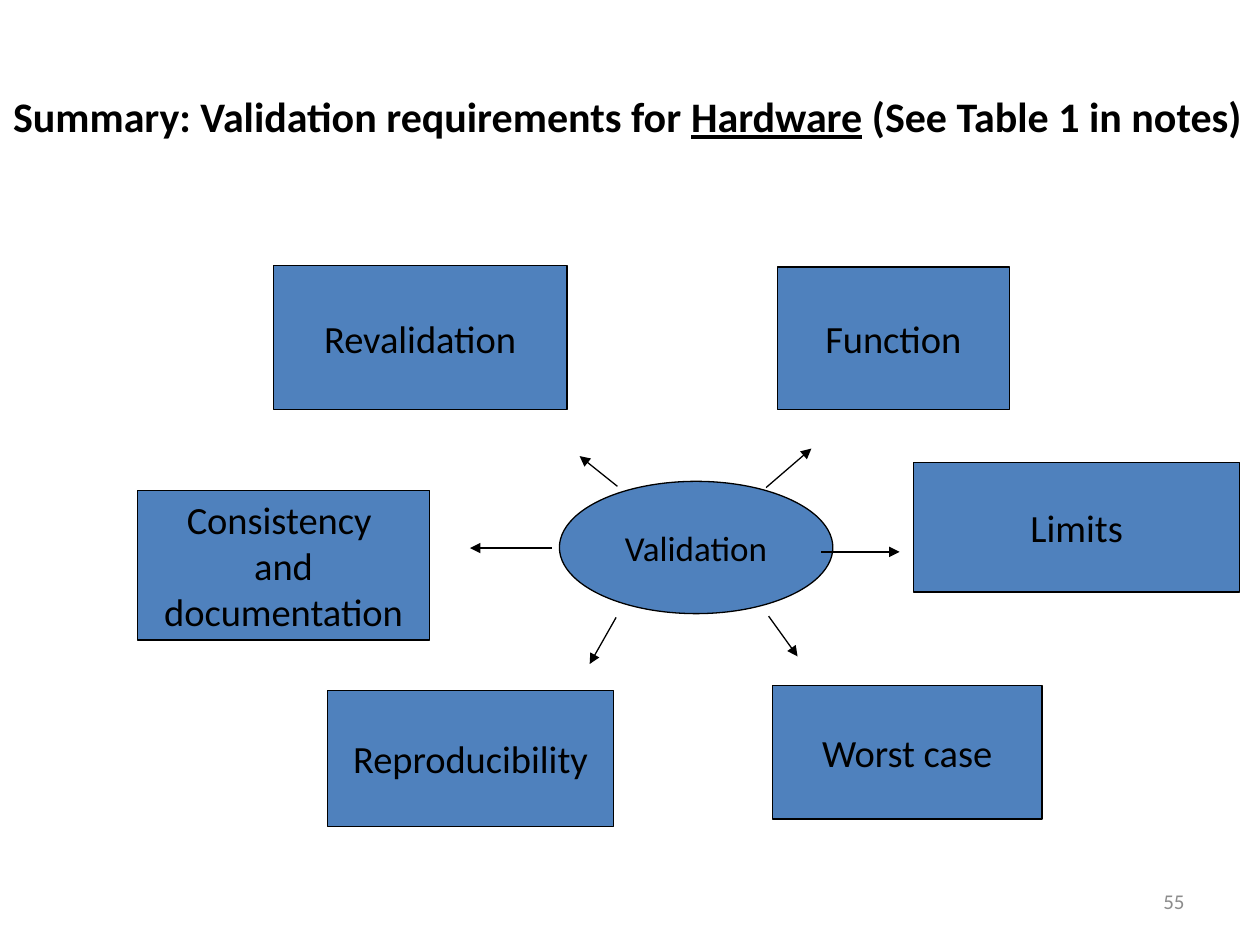
from lxml.etree import SubElement
from pptx import Presentation
from pptx.dml.color import RGBColor
from pptx.enum.shapes import MSO_CONNECTOR, MSO_SHAPE
from pptx.enum.text import MSO_ANCHOR, MSO_AUTO_SIZE, PP_ALIGN
from pptx.oxml.ns import qn
from pptx.util import Inches, Pt

BLACK = RGBColor(0x00, 0x00, 0x00)
BLUE = RGBColor(0x4F, 0x81, 0xBD)
GRAY = RGBColor(0x8C, 0x8C, 0x8C)
FONT = "Calibri"

TITLE = [
    ("Summary: Validation requirements for ", False),
    ("Hardware", True),
    (" (See Table 1 in notes)", False),
]
HUB = ("Validation", (4.44, 3.82, 2.17, 1.05))
REQUIREMENTS = [
    ("Reproducibility", (2.6, 5.48, 2.27, 1.08)),
    ("Consistency \nand\ndocumentation", (1.09, 3.89, 2.32, 1.19)),
    ("Limits", (7.25, 3.67, 2.59, 1.03)),
    ("Worst case", (6.13, 5.44, 2.14, 1.06)),
    ("Revalidation", (2.17, 2.11, 2.33, 1.14)),
    ("Function", (6.17, 2.12, 1.84, 1.13)),
]
ARROWS = [
    (6.52, 4.38, 7.14, 4.38),
    (4.38, 4.35, 3.73, 4.35),
    (4.89, 4.9, 4.68, 5.27),
    (6.1, 4.89, 6.33, 5.21),
    (6.08, 3.87, 6.44, 3.56),
    (4.9, 3.86, 4.6, 3.62),
]
PAGE_NUMBER = "55"


def inches(values):
    return [Inches(value) for value in values]


def write_text(shape, text, size, color=BLACK, bold=False,
               align=PP_ALIGN.CENTER, wrap=True):
    runs = [(text, False)] if isinstance(text, str) else text
    frame = shape.text_frame
    frame.auto_size = MSO_AUTO_SIZE.NONE
    frame.word_wrap = wrap
    frame.vertical_anchor = MSO_ANCHOR.MIDDLE
    paragraph = frame.paragraphs[0]
    for content, underlined in runs:
        for index, line in enumerate(content.split("\n")):
            if index:
                paragraph = frame.add_paragraph()
            paragraph.alignment = align
            run = paragraph.add_run()
            run.text = line
            run.font.name = FONT
            run.font.size = Pt(size)
            run.font.bold = bold
            run.font.underline = underlined
            run.font.color.rgb = color


def add_node(slide, kind, text, box, size):
    shape = slide.shapes.add_shape(kind, *inches(box))
    shape.shadow.inherit = False
    shape.fill.solid()
    shape.fill.fore_color.rgb = BLUE
    shape.line.color.rgb = BLACK
    shape.line.width = Pt(0.75)
    write_text(shape, text, size, wrap=False)


def add_arrow(slide, ends):
    connector = slide.shapes.add_connector(MSO_CONNECTOR.STRAIGHT, *inches(ends))
    connector.line.color.rgb = BLACK
    connector.line.width = Pt(0.75)
    SubElement(connector.line._get_or_add_ln(), qn("a:tailEnd"), type="triangle")
    SubElement(connector._element.spPr, qn("a:effectLst"))


def main():
    presentation = Presentation()
    presentation.slide_width, presentation.slide_height = inches((10, 7.5))
    slide = presentation.slides.add_slide(presentation.slide_layouts[5])

    title = slide.shapes.title
    title.left, title.top, title.width, title.height = inches((-0.12, 0.67, 10.2, 0.5))
    write_text(title, TITLE, 24, bold=True)

    add_node(slide, MSO_SHAPE.OVAL, *HUB, size=20)
    for text, box in REQUIREMENTS:
        add_node(slide, MSO_SHAPE.RECTANGLE, text, box, size=22)
    for ends in ARROWS:
        add_arrow(slide, ends)

    number = slide.shapes.add_textbox(*inches((7.17, 6.95, 2.33, 0.4)))
    write_text(number, PAGE_NUMBER, 12, color=GRAY, align=PP_ALIGN.RIGHT)

    presentation.save("out.pptx")


if __name__ == "__main__":
    main()
